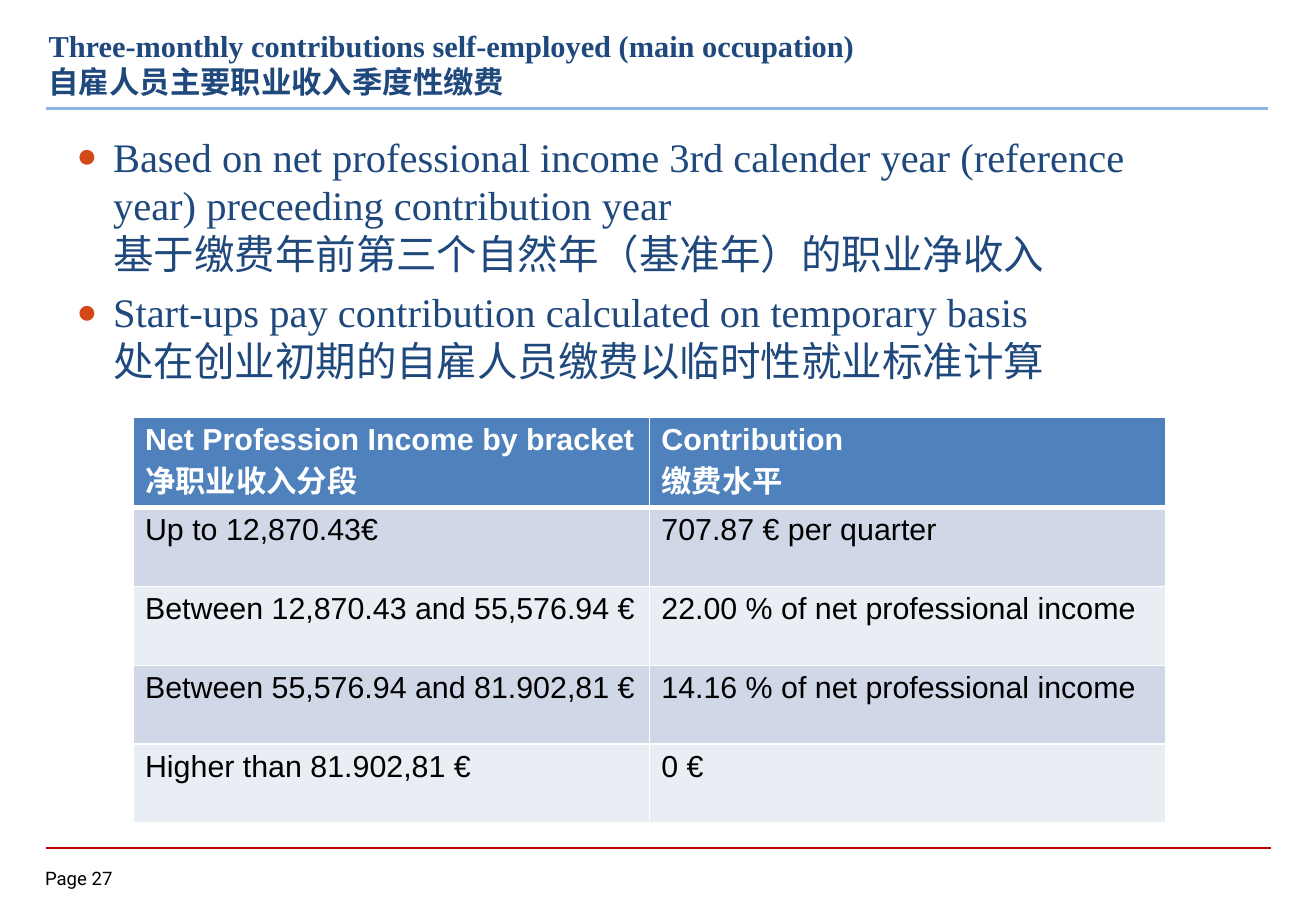
from lxml import etree
from pptx import Presentation
from pptx.dml.color import RGBColor
from pptx.enum.shapes import MSO_CONNECTOR
from pptx.enum.text import MSO_ANCHOR, MSO_AUTO_SIZE, PP_ALIGN
from pptx.oxml.ns import qn
from pptx.util import Pt

STRAIGHT = MSO_CONNECTOR.STRAIGHT
TOP, BOTTOM = MSO_ANCHOR.TOP, MSO_ANCHOR.BOTTOM
NO_FIT = MSO_AUTO_SIZE.NONE
LEFT = PP_ALIGN.LEFT

COLORS = {
    "navy": "1F497D", "sky": "8EB4E3", "red": "C00000", "bullet": "D34817",
    "header": "4F81BD", "odd": "D0D8E8", "even": "E9EDF4",
    "white": "FFFFFF", "black": "000000",
}
SERIF, SANS, PAGE_FONT = "Times New Roman", "Arial", "Roboto"

TITLE = "Three-monthly contributions self-employed (main occupation)\v自雇人员主要职业收入季度性缴费"
POINTS = [
    "Based on net professional income 3rd calender year (reference year) "
    "preceeding contribution year\v基于缴费年前第三个自然年（基准年）的职业净收入",
    "Start-ups pay contribution calculated on temporary basis\v"
    "处在创业初期的自雇人员缴费以临时性就业标准计算",
]
BRACKETS = [
    ("Net Profession Income by bracket\n净职业收入分段", "Contribution\n缴费水平"),
    ("Up to 12,870.43€", "707.87 € per quarter"),
    ("Between 12,870.43 and 55,576.94 €", "22.00 % of net professional income"),
    ("Between 55,576.94 and 81.902,81 €", "14.16 % of net professional income"),
    ("Higher than 81.902,81 €", "0 €"),
]


def rgb(name):
    return RGBColor.from_string(COLORS[name])


def place(shape, box):
    shape.left, shape.top, shape.width, shape.height = map(Pt, box)


def style(paragraph, font, size, color, bold=False):
    paragraph.alignment = LEFT
    for run in paragraph.runs:
        run.font.name = font
        run.font.size = Pt(size)
        run.font.bold = bold
        run.font.color.rgb = rgb(color)


def add_rule(slide, left, top, width, color, weight):
    rule = slide.shapes.add_connector(
        STRAIGHT, Pt(left), Pt(top), Pt(left + width), Pt(top))
    rule.line.color.rgb = rgb(color)
    rule.line.width = Pt(weight)
    etree.SubElement(rule._element.spPr, qn("a:effectLst"))


def add_heading(slide, box):
    heading = slide.shapes.title
    place(heading, box)
    frame = heading.text_frame
    frame.text = TITLE
    frame.auto_size = NO_FIT
    frame.vertical_anchor = BOTTOM
    frame.margin_bottom = Pt(7.2)
    style(frame.paragraphs[0], SERIF, 18, "navy", True)
    left, top, width, height = box
    add_rule(slide, left + 5.8, top + height - 2, 724.3, "sky", 1.5)


def add_bullet(paragraph, indent):
    props = paragraph._p.get_or_add_pPr()
    props.set("marL", str(Pt(indent)))
    props.set("indent", str(-Pt(indent)))
    color = etree.SubElement(props, qn("a:buClr"))
    etree.SubElement(color, qn("a:srgbClr"), val=COLORS["bullet"])
    etree.SubElement(props, qn("a:buSzPct"), val="85000")
    etree.SubElement(props, qn("a:buChar"), char="●")


def add_points(slide, box):
    points = slide.placeholders[1]
    place(points, box)
    frame = points.text_frame
    frame.text = "\n".join(POINTS).replace("\v", "\v")
    frame.auto_size = NO_FIT
    frame.vertical_anchor = TOP
    for index, paragraph in enumerate(frame.paragraphs):
        add_bullet(paragraph, 21.6)
        paragraph.space_before = Pt(5.8 if index else 0)
        style(paragraph, SERIF, 24, "navy")


def add_borders(cell, bottom):
    props = cell._tc.get_or_add_tcPr()
    weights = {"a:lnL": 1, "a:lnR": 1, "a:lnT": 1, "a:lnB": bottom}
    for index, (tag, weight) in enumerate(weights.items()):
        border = etree.Element(qn(tag), w=str(Pt(weight)))
        fill = etree.SubElement(border, qn("a:solidFill"))
        etree.SubElement(fill, qn("a:srgbClr"), val=COLORS["white"])
        props.insert(index, border)


def add_brackets(slide, box):
    table = slide.shapes.add_table(
        len(BRACKETS), len(BRACKETS[0]), *map(Pt, box)).table
    for row, values in enumerate(BRACKETS):
        is_header = row == 0
        fill = "header" if is_header else "odd" if row % 2 else "even"
        for column, value in enumerate(values):
            cell = table.cell(row, column)
            cell.text_frame.text = value
            cell.fill.solid()
            cell.fill.fore_color.rgb = rgb(fill)
            add_borders(cell, 3 if is_header else 1)
            for paragraph in cell.text_frame.paragraphs:
                style(paragraph, SANS, 18, "white" if is_header else "black", is_header)


def add_footer(slide, box):
    left, top, width, height = box
    add_rule(slide, left, top, width, "red", 1)
    page = slide.shapes.add_textbox(Pt(left - 0.7), Pt(top + 11.5), Pt(52.6), Pt(height - 11.5))
    frame = page.text_frame
    frame.margin_left = frame.margin_right = frame.margin_top = frame.margin_bottom = 0
    frame.text = "Page 27"
    style(frame.paragraphs[0], PAGE_FONT, 11, "black")


def main():
    deck = Presentation()
    deck.slide_width, deck.slide_height = Pt(780), Pt(540)
    slide = deck.slides.add_slide(deck.slide_layouts[1])
    add_heading(slide, (21.6, 15.1, 713.5, 51.1))
    add_points(slide, (38.2, 74.5, 657.4, 157))
    add_brackets(slide, (78.8, 247.3, 612, 234))
    add_footer(slide, (27.4, 502.6, 725.8, 27.4))
    deck.save("out.pptx")


if __name__ == "__main__":
    main()
